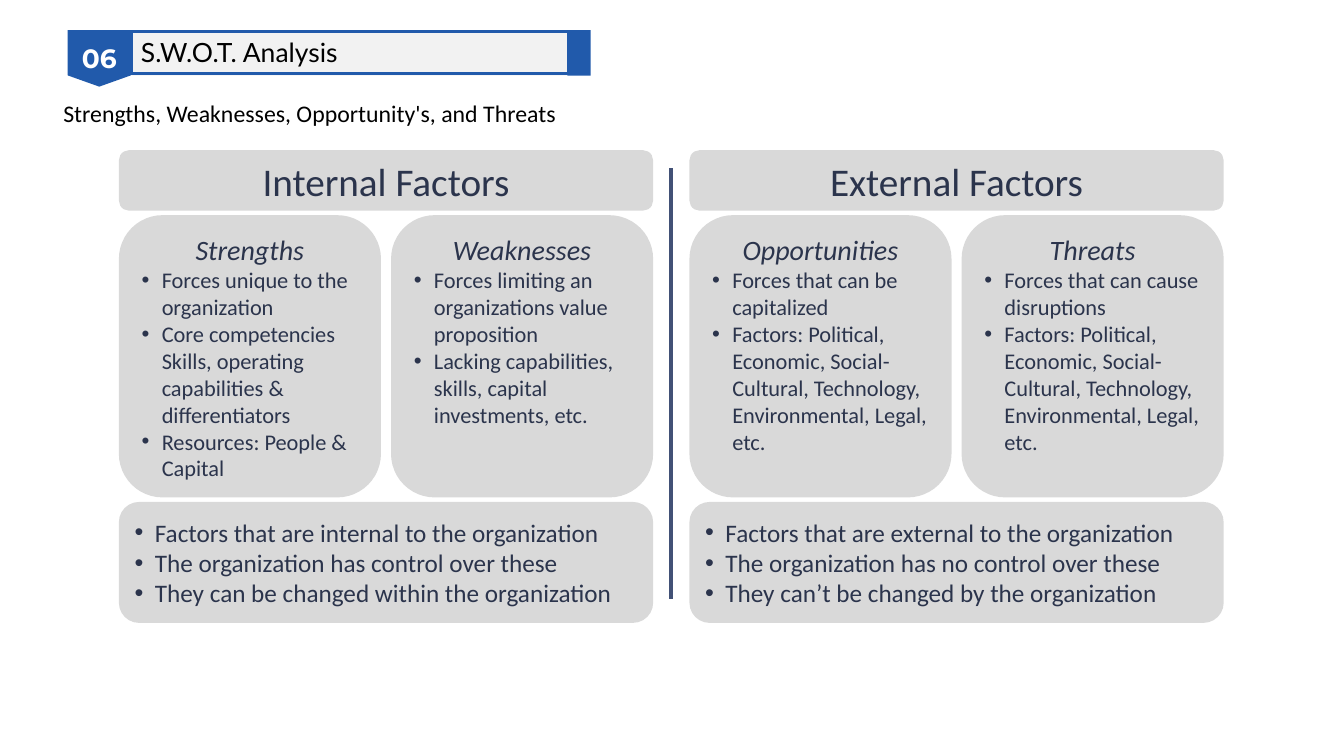
from dataclasses import dataclass

from lxml.etree import SubElement
from pptx import Presentation
from pptx.dml.color import RGBColor
from pptx.enum.shapes import MSO_CONNECTOR, MSO_SHAPE
from pptx.enum.text import MSO_ANCHOR, PP_ALIGN
from pptx.oxml.ns import qn
from pptx.util import Pt


@dataclass(frozen=True)
class Theme:
    """Colours, fonts and type sizes of the slide."""
    accent: str = "215AAB"
    banner: str = "F2F2F2"
    panel: str = "D9D9D9"
    ink: str = "2B344C"
    divider: str = "425176"
    black: str = "000000"
    white: str = "FFFFFF"
    body_font: str = "Calibri"
    title_font: str = "Lato"
    number_font: str = "Montserrat"
    title_size: float = 18.9
    subtitle_size: float = 17
    header_size: float = 28
    quadrant_size: float = 20
    bullet_size: float = 16
    summary_size: float = 18


THEME = Theme()
INDENT = Pt(14.4)

FACTORS = [
    (
        "Internal Factors",
        [
            ("Strengths", [
                "Forces unique to the organization",
                "Core competencies Skills, operating capabilities & differentiators",
                "Resources: People & Capital",
            ]),
            ("Weaknesses", [
                "Forces limiting an organizations value proposition",
                "Lacking capabilities, skills, capital investments, etc.",
            ]),
        ],
        [
            "Factors that are internal to the organization",
            "The organization has control over these",
            "They can be changed within the organization",
        ],
    ),
    (
        "External Factors",
        [
            ("Opportunities", [
                "Forces that can be capitalized",
                "Factors: Political, Economic, Social-Cultural, Technology, Environmental, Legal, etc.",
            ]),
            ("Threats", [
                "Forces that can cause disruptions",
                "Factors: Political, Economic, Social-Cultural, Technology, Environmental, Legal, etc.",
            ]),
        ],
        [
            "Factors that are external to the organization",
            "The organization has no control over these",
            "They can’t be changed by the organization",
        ],
    ),
]


def write(frame, text, size, color=THEME.ink, font=THEME.body_font, bold=False,
          italic=False, align=PP_ALIGN.LEFT, bullet=False, spacing=None):
    """Add one formatted paragraph, using the empty first one if there is one."""
    first = frame.paragraphs[0]
    paragraph = frame.add_paragraph() if first.runs else first
    paragraph.alignment = align
    if spacing:
        paragraph.line_spacing = spacing
    if bullet:
        properties = paragraph._p.get_or_add_pPr()
        properties.set("marL", str(INDENT))
        properties.set("indent", str(-INDENT))
        SubElement(properties, qn("a:buFont"), typeface="Arial")
        SubElement(properties, qn("a:buChar"), char="•")
    run = paragraph.add_run()
    run.text = text
    run.font.name = font
    run.font.size = Pt(size)
    run.font.bold = bold
    run.font.italic = italic
    run.font.color.rgb = RGBColor.from_string(color)


def block(slide, kind, box, fill=None, outline=None, anchor=MSO_ANCHOR.MIDDLE):
    """Add a flat preset shape and return its text frame."""
    shape = slide.shapes.add_shape(kind, *map(Pt, box))
    shape.shadow.inherit = False
    if fill:
        shape.fill.solid()
        shape.fill.fore_color.rgb = RGBColor.from_string(fill)
    else:
        shape.fill.background()
    if outline:
        shape.line.color.rgb = RGBColor.from_string(outline)
        shape.line.width = Pt(2.25)
    else:
        shape.line.fill.background()
    shape.text_frame.word_wrap = True
    shape.text_frame.vertical_anchor = anchor
    return shape.text_frame


def label(slide, box, anchor=MSO_ANCHOR.TOP):
    """Add a wrapping text box and return its text frame."""
    frame = slide.shapes.add_textbox(*map(Pt, box)).text_frame
    frame.word_wrap = True
    frame.vertical_anchor = anchor
    return frame


def title_banner(slide, box, number, title):
    """Draw the numbered tag, the title bar and its end cap."""
    left, top, width, height = box
    tag_width, cap_width, bar_height = 45.36, 16.56, 32.4
    bar_left = left + tag_width
    bar_width = width - tag_width - cap_width
    block(slide, MSO_SHAPE.FLOWCHART_OFFPAGE_CONNECTOR,
          (left, top, tag_width, height), THEME.accent)
    block(slide, MSO_SHAPE.RECTANGLE,
          (bar_left, top, bar_width, bar_height), THEME.banner)
    block(slide, MSO_SHAPE.RECTANGLE,
          (bar_left + bar_width, top, cap_width, bar_height), THEME.accent)

    tag = label(slide, (left, top + 7.92, tag_width, 23.04), MSO_ANCHOR.MIDDLE)
    tag.margin_left = tag.margin_right = tag.margin_top = tag.margin_bottom = 0
    write(tag, number, THEME.title_size, THEME.white, THEME.number_font,
          bold=True, align=PP_ALIGN.CENTER)
    heading = block(slide, MSO_SHAPE.RECTANGLE,
                    (bar_left, top + 0.72, bar_width + 0.72, 30.24),
                    outline=THEME.accent, anchor=MSO_ANCHOR.TOP)
    write(heading, title, THEME.title_size, THEME.black, THEME.title_font)


def factor_column(slide, box, header, quadrants, summary):
    """Draw a header, its quadrants side by side and a summary below."""
    left, top, width, height = box
    header_height, summary_height, row_gap, quadrant_gap = 43.2, 86.4, 3.24, 7.2
    quadrant_top = top + header_height + row_gap
    quadrant_height = height - header_height - summary_height - 2 * row_gap
    quadrant_width = (width - quadrant_gap) / 2

    head = block(slide, MSO_SHAPE.ROUNDED_RECTANGLE,
                 (left, top, width, header_height), THEME.panel)
    write(head, header, THEME.header_size, align=PP_ALIGN.CENTER)
    for index, (name, points) in enumerate(quadrants):
        quadrant_left = left + index * (quadrant_width + quadrant_gap)
        quadrant = block(
            slide, MSO_SHAPE.ROUNDED_RECTANGLE,
            (quadrant_left, quadrant_top, quadrant_width, quadrant_height),
            THEME.panel, anchor=MSO_ANCHOR.TOP)
        write(quadrant, name, THEME.quadrant_size, italic=True, align=PP_ALIGN.CENTER)
        for point in points:
            write(quadrant, point, THEME.bullet_size, bullet=True)
    foot = block(slide, MSO_SHAPE.ROUNDED_RECTANGLE,
                 (left, top + height - summary_height, width, summary_height), THEME.panel)
    for point in summary:
        write(foot, point, THEME.summary_size, bullet=True)


def swot_board(slide, box, factors):
    """Draw the two factor columns with a divider between them."""
    left, top, width, height = box
    column_width = 381.6
    for index, factor in enumerate(factors):
        column_left = left + index * (width - column_width)
        factor_column(slide, (column_left, top, column_width, height), *factor)
    middle = left + width / 2
    divider = slide.shapes.add_connector(
        MSO_CONNECTOR.STRAIGHT, Pt(middle), Pt(top + 12.96), Pt(middle), Pt(top + height - 17.28))
    divider.line.color.rgb = RGBColor.from_string(THEME.divider)
    divider.line.width = Pt(3)
    SubElement(divider._element.spPr, qn("a:effectLst"))


def main():
    """Build the slide and save it."""
    deck = Presentation()
    deck.slide_width, deck.slide_height = Pt(960), Pt(540)
    slide = deck.slides.add_slide(deck.slide_layouts[6])
    subtitle = label(slide, (38.16, 64.8, 883.44, 29.52))
    write(subtitle, "Strengths, Weaknesses, Opportunity's, and Threats",
          THEME.subtitle_size, THEME.black, spacing=1.1)
    title_banner(slide, (48.24, 21.6, 373.68, 40.32), "06", "S.W.O.T. Analysis")
    swot_board(slide, (84.96, 107.28, 789.12, 337.68), FACTORS)
    deck.save("out.pptx")


if __name__ == "__main__":
    main()
